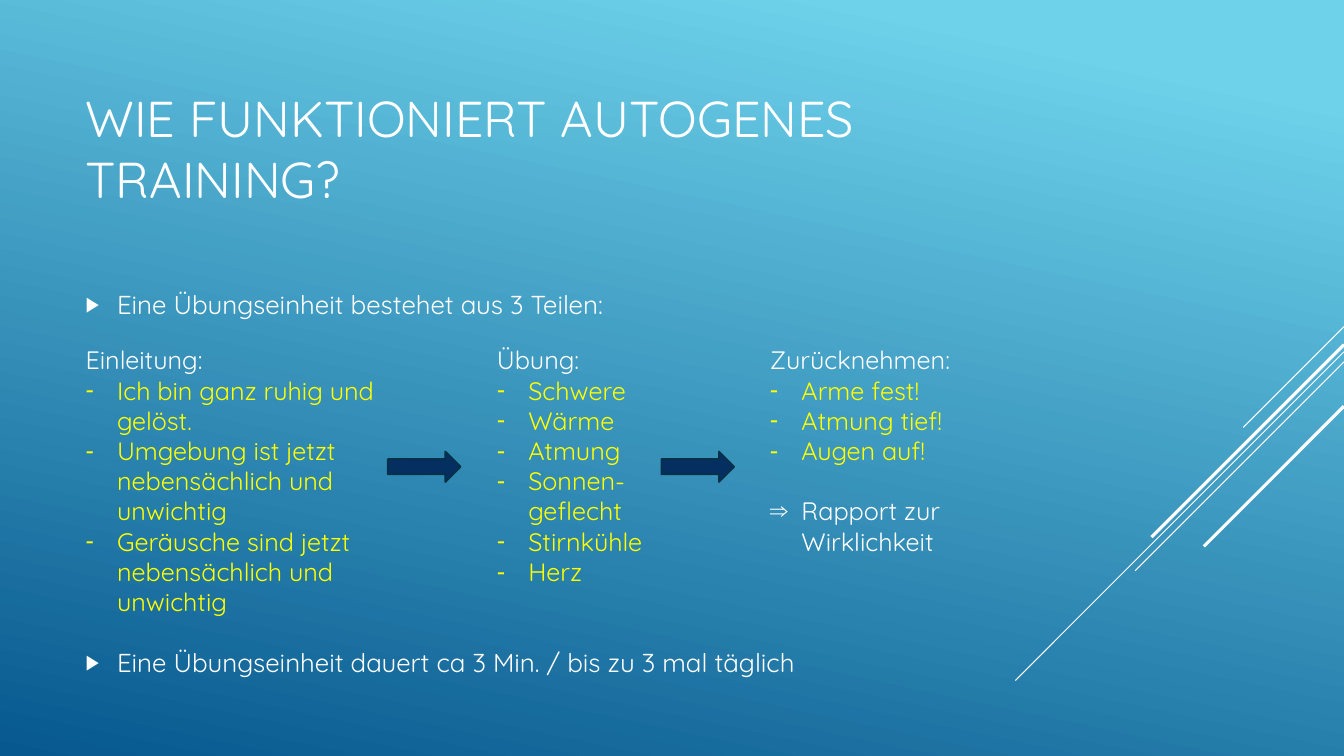
from lxml import etree
from pptx import Presentation
from pptx.dml.color import RGBColor
from pptx.enum.shapes import MSO_CONNECTOR, MSO_SHAPE
from pptx.enum.text import MSO_ANCHOR
from pptx.oxml.ns import qn
from pptx.util import Pt

STRAIGHT = MSO_CONNECTOR.STRAIGHT
RIGHT_ARROW = MSO_SHAPE.RIGHT_ARROW
TOP, MIDDLE = MSO_ANCHOR.TOP, MSO_ANCHOR.MIDDLE

FONT = "Quicksand"
COLORS = {
    "sky": "6ED2EB",
    "deep": "06588E",
    "text": "FFFFFF",
    "accent": "FFFF00",
    "arrow": "052F61",
    "arrow_edge": "043148",
}
SLIDE_WIDTH, SLIDE_HEIGHT = 960, 540
LEFT = 54
INDENT = 22.5
COLUMN_TOP = 242.6

COLUMNS = [
    (LEFT, 258.5, "Einleitung:", [
        "Ich bin ganz ruhig und gelöst.",
        "Umgebung ist jetzt nebensächlich und unwichtig",
        "Geräusche sind jetzt nebensächlich und unwichtig",
    ]),
    (347.8, 144, "Übung:", [
        "Schwere", "Wärme", "Atmung", "Sonnen-geflecht", "Stirnkühle", "Herz",
    ]),
    (542.9, 149.8, "Zurücknehmen:", ["Arme fest!", "Atmung tief!", "Augen auf!"]),
]
STATEMENTS = [
    (202.5, "Eine Übungseinheit bestehet aus 3 Teilen:"),
    (458.2, "Eine Übungseinheit dauert ca 3 Min. / bis zu 3 mal täglich"),
]
DIAGONALS = [
    (233.3, 72, 0.75),
    (251.3, 234.7, 0.75),
    (258.5, 149.2, 0.75),
    (246.2, 137.5, 2.25),
    (290.2, 100.1, 2.25),
]
ARROW_LEFTS = [277, 472.5]


def color(name):
    """Return the named colour."""
    return RGBColor.from_string(COLORS[name])


def paint_background(slide):
    """Fill the slide with the blue gradient."""
    fill = slide.background.fill
    fill.gradient()
    fill.gradient_angle = 258
    for stop, position, name in zip(fill.gradient_stops, (0.1, 1), ("sky", "deep")):
        stop.position = position
        stop.color.rgb = color(name)


def add_text_frame(slide, left, top, width, height, anchor=TOP):
    """Add a wrapping text box and return its text frame."""
    box = slide.shapes.add_textbox(Pt(left), Pt(top), Pt(width), Pt(height))
    frame = box.text_frame
    frame.word_wrap = True
    frame.vertical_anchor = anchor
    return frame


def set_bullet(paragraph, character, size):
    """Give a paragraph a hanging bullet."""
    properties = paragraph._p.get_or_add_pPr()
    properties.set("marL", str(Pt(INDENT)))
    properties.set("indent", str(-Pt(INDENT)))
    etree.SubElement(properties, qn("a:buSzPct"), val=str(size * 1000))
    etree.SubElement(properties, qn("a:buFont"), typeface="Arial")
    etree.SubElement(properties, qn("a:buChar"), char=character)


def write(frame, text, size=18, fill="text", bullet=None, bullet_size=100, before=0):
    """Write one formatted paragraph into a text frame."""
    paragraph = frame.paragraphs[0]
    if paragraph.runs:
        paragraph = frame.add_paragraph()
    paragraph.space_before = Pt(before)
    if bullet:
        set_bullet(paragraph, bullet, bullet_size)
    run = paragraph.add_run()
    run.text = text
    run.font.name = FONT
    run.font.size = Pt(size)
    run.font.color.rgb = color(fill)


def add_column(slide, left, width, heading, items):
    """Add a heading with dashed items and return the text frame."""
    frame = add_text_frame(slide, left, COLUMN_TOP, width, 204)
    write(frame, heading)
    for item in items:
        write(frame, item, fill="accent", bullet="-")
    return frame


def add_diagonal(slide, top, span, weight):
    """Draw a 45 degree line down from the right edge."""
    line = slide.shapes.add_connector(
        STRAIGHT, Pt(SLIDE_WIDTH), Pt(top), Pt(SLIDE_WIDTH - span), Pt(top + span))
    line.line.color.rgb = color("text")
    line.line.width = Pt(weight)
    etree.SubElement(line._element.spPr, qn("a:effectLst"))


def add_arrow(slide, left):
    """Add a block arrow between two columns."""
    arrow = slide.shapes.add_shape(RIGHT_ARROW, Pt(left), Pt(322.5), Pt(52), Pt(21.8))
    arrow.shadow.inherit = False
    arrow.fill.solid()
    arrow.fill.fore_color.rgb = color("arrow")
    arrow.line.color.rgb = color("arrow_edge")
    arrow.line.width = Pt(1.25)


def main():
    """Build and save the slide."""
    presentation = Presentation()
    presentation.slide_width = Pt(SLIDE_WIDTH)
    presentation.slide_height = Pt(SLIDE_HEIGHT)
    slide = presentation.slides.add_slide(presentation.slide_layouts[6])
    paint_background(slide)
    for diagonal in DIAGONALS:
        add_diagonal(slide, *diagonal)
    title = add_text_frame(slide, LEFT, 46, 672, 119, anchor=MIDDLE)
    write(title, "WIE FUNKTIONIERT AUTOGENES TRAINING?", size=36)
    for top, text in STATEMENTS:
        statement = add_text_frame(slide, LEFT, top, 672, 30)
        write(statement, text, size=18.5, bullet="▶", bullet_size=80)
    for column in COLUMNS:
        frame = add_column(slide, *column)
    write(frame, "Rapport zur Wirklichkeit", bullet="⇒", before=21.6)
    for left in ARROW_LEFTS:
        add_arrow(slide, left)
    presentation.save("out.pptx")


if __name__ == "__main__":
    main()
